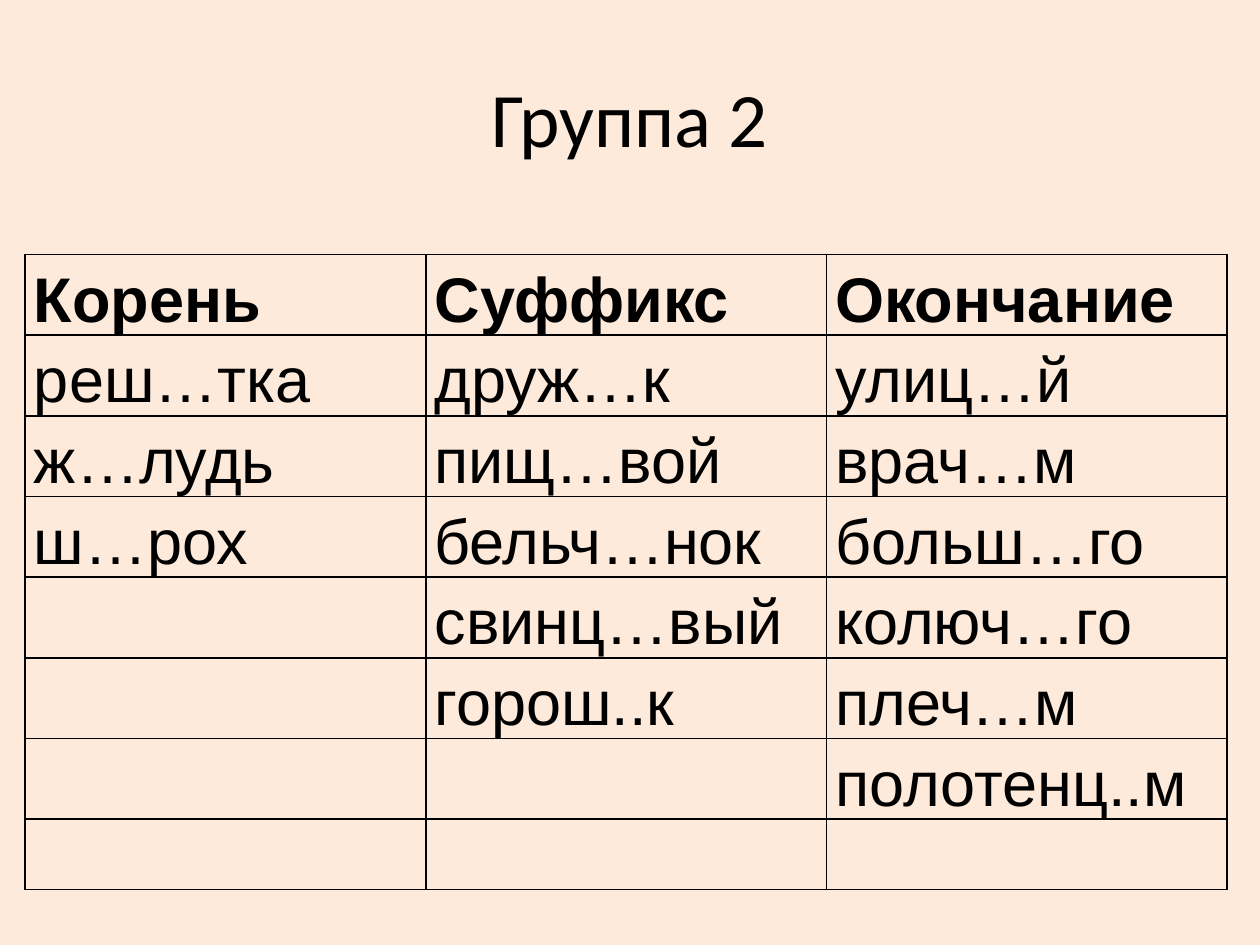
from dataclasses import dataclass

from lxml.etree import SubElement
from pptx import Presentation
from pptx.dml.color import RGBColor
from pptx.enum.text import MSO_ANCHOR, PP_ALIGN
from pptx.oxml.ns import qn
from pptx.util import Inches, Pt


@dataclass(frozen=True)
class Theme:
    background: str = "FDEADA"
    ink: str = "000000"
    title_font: str = "Calibri"
    table_font: str = "Arial"
    title_size: int = 44
    table_size: int = 36
    border_width: int = 1


THEME = Theme()
HEADERS = ["Корень", "Суффикс", "Окончание"]
WORDS = [
    ["реш…тка", "ж…лудь", "ш…рох"],
    ["друж…к", "пищ…вой", "бельч…нок", "свинц…вый", "горош..к"],
    ["улиц…й", "врач…м", "больш…го", "колюч…го", "плеч…м", "полотенц..м"],
]
ROW_HEIGHTS = [0.64] * 7 + [0.56]
COLUMN_WIDTH = 3.18


def write_text(frame, text, *, font, size, bold=False,
               alignment=PP_ALIGN.LEFT, line_spacing=1.0):
    paragraph = frame.paragraphs[0]
    paragraph.alignment = alignment
    paragraph.line_spacing = line_spacing
    run = paragraph.add_run()
    run.text = text
    run.font.name = font
    run.font.size = Pt(size)
    run.font.bold = bold
    run.font.color.rgb = RGBColor.from_string(THEME.ink)


def add_title(slide, text):
    shape = slide.shapes.add_textbox(
        Inches(0.5), Inches(0.3), Inches(9), Inches(1.25))
    frame = shape.text_frame
    frame.word_wrap = True
    frame.vertical_anchor = MSO_ANCHOR.MIDDLE
    write_text(frame, text, font=THEME.title_font, size=THEME.title_size,
               alignment=PP_ALIGN.CENTER)


def add_borders(cell):
    properties = cell._tc.get_or_add_tcPr()
    for position, side in enumerate(("lnL", "lnR", "lnT", "lnB")):
        line = SubElement(properties, qn(f"a:{side}"),
                          w=str(Pt(THEME.border_width)))
        fill = SubElement(line, qn("a:solidFill"))
        SubElement(fill, qn("a:srgbClr"), val=THEME.ink)
        properties.insert(position, line)


def format_cell(cell):
    cell.margin_left = cell.margin_right = Inches(0.07)
    cell.margin_top = 0
    cell.margin_bottom = Inches(-0.05)
    cell.fill.background()
    add_borders(cell)


def add_word_table(slide):
    table = slide.shapes.add_table(
        len(ROW_HEIGHTS), len(HEADERS), Inches(0.2), Inches(2.02),
        Inches(COLUMN_WIDTH * len(HEADERS)), Inches(sum(ROW_HEIGHTS))).table
    table.first_row = False
    table.horz_banding = False
    for row, height in zip(table.rows, ROW_HEIGHTS):
        row.height = Inches(height)
    for column in table.columns:
        column.width = Inches(COLUMN_WIDTH)
    for cell in table.iter_cells():
        format_cell(cell)
    for column, (header, words) in enumerate(zip(HEADERS, WORDS)):
        for row, text in enumerate([header, *words]):
            write_text(table.cell(row, column).text_frame, text,
                       font=THEME.table_font, size=THEME.table_size,
                       bold=row == 0, line_spacing=1.15)


def main():
    presentation = Presentation()
    presentation.slide_width = Inches(10)
    presentation.slide_height = Inches(7.5)
    slide = presentation.slides.add_slide(presentation.slide_layouts[6])
    slide.background.fill.solid()
    slide.background.fill.fore_color.rgb = RGBColor.from_string(THEME.background)
    add_title(slide, "Группа 2")
    add_word_table(slide)
    presentation.save("out.pptx")


if __name__ == "__main__":
    main()
